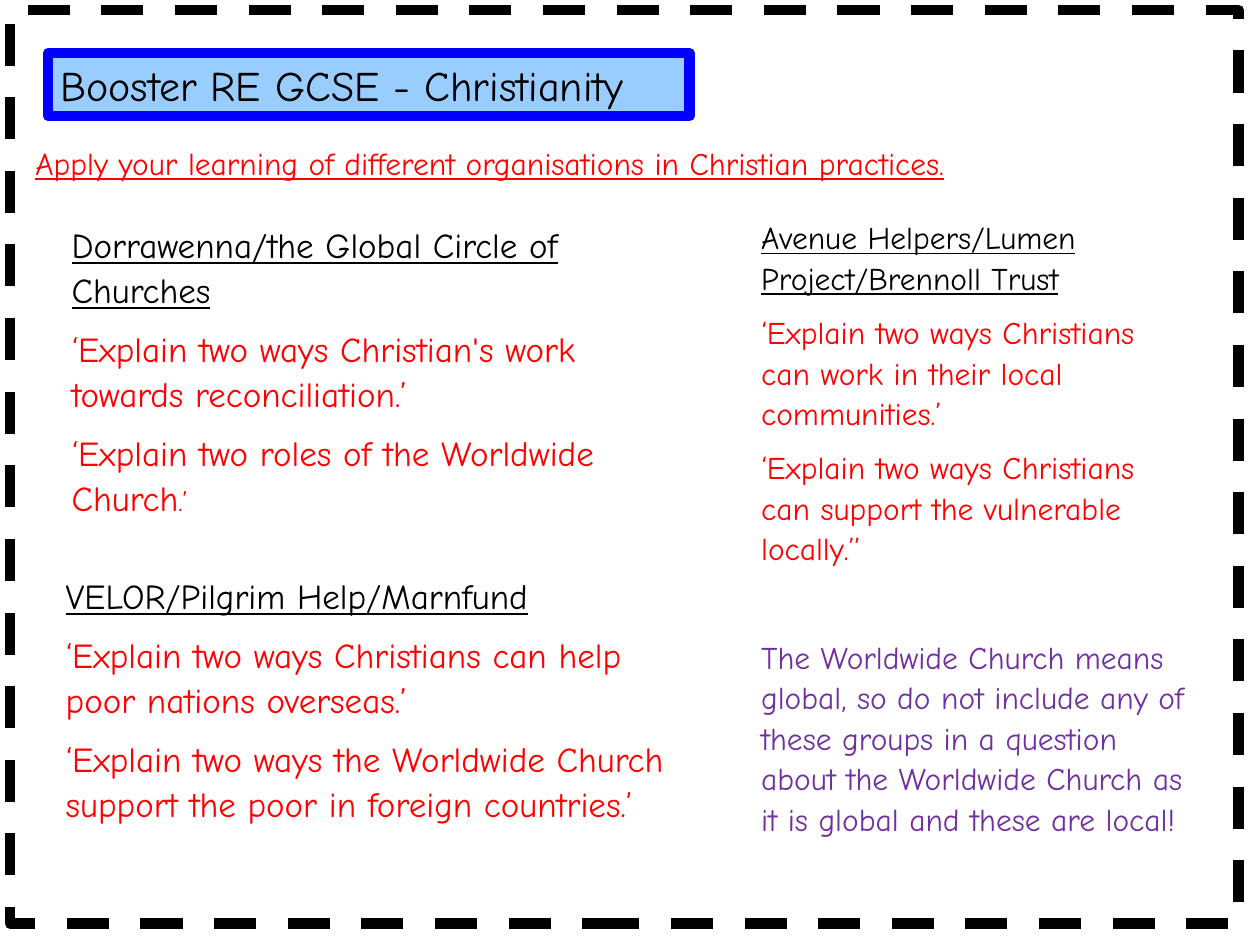
import pptx
import pptx.dml.color
import pptx.enum.dml
import pptx.enum.shapes
import pptx.enum.text
import pptx.oxml
import pptx.oxml.ns
import pptx.util

FONT = "Comic Neue"
COLOURS = {"black": "000000", "red": "FF0000", "purple": "7030A0",
           "blue": "0000FF", "sky": "99CCFF"}
BORDER_WIDTH = 6

FRAME_AREA = (0.2, 0.2, 24.77, 18.42)
TITLE = "Booster RE GCSE - Christianity"
TITLE_AREA = (0.97, 1.07, 12.93, 1.27)

# Each paragraph is (text, format); areas are left, top, width, height in cm.
HEADING = {"colour": "black", "underline": True}
QUESTION = {"colour": "red"}
BLOCKS = [
    {"area": (0.46, 2.72, 23.04, 1.04), "size": 18, "paragraphs": [
        ("Apply your learning of different organisations in Christian practices.",
         {"colour": "red", "underline": True}),
    ]},
    {"area": (1.19, 4.32, 12.7, 7.29), "size": 20, "paragraphs": [
        ("Dorrawenna/the Global Circle of Churches", HEADING),
        ("‘Explain two ways Christian's work towards reconciliation.’", QUESTION),
        ("‘Explain two roles of the Worldwide Church",
         {**QUESTION, "ending": ".’", "ending_size": 16}),
    ]},
    {"area": (1.07, 11.4, 12.7, 7.29), "size": 20, "paragraphs": [
        ("VELOR/Pilgrim Help/Marnfund", HEADING),
        ("‘Explain two ways Christians can help poor nations overseas.’", QUESTION),
        ("‘Explain two ways the Worldwide Church support the poor in foreign countries.’",
         QUESTION),
    ]},
    {"area": (15.09, 4.22, 9.14, 13.69), "size": 18, "paragraphs": [
        ("Avenue Helpers/Lumen Project/Brennoll Trust", HEADING),
        ("‘Explain two ways Christians can work in their local communities.’", QUESTION),
        ("‘Explain two ways Christians can support the vulnerable locally.’’", QUESTION),
        ("The Worldwide Church means global, so do not include any of these groups "
         "in a question about the Worldwide Church as it is global and these are local!",
         {"colour": "purple", "before": 31}),
    ]},
]


def rgb(name):
    return pptx.dml.color.RGBColor.from_string(COLOURS[name])


def place(shape, area):
    shape.left, shape.top, shape.width, shape.height = map(pptx.util.Cm, area)


def prepare_text(shape):
    frame = shape.text_frame
    frame.word_wrap = True
    frame.auto_size = pptx.enum.text.MSO_AUTO_SIZE.NONE
    frame.vertical_anchor = pptx.enum.text.MSO_ANCHOR.TOP
    return frame


def add_span(para, text, size, colour, underline):
    span = para.add_run()
    span.text = text
    span.font.name = FONT
    span.font.size = pptx.util.Pt(size)
    span.font.bold = False
    span.font.underline = underline
    span.font.color.rgb = rgb(colour)


def write(para, text, size=18, colour="black", underline=False, before=0, after=8,
          spacing=1.07, ending="", ending_size=None):
    """Fill an unbulleted paragraph; ending is a closing span in its own size."""
    properties = para._p.get_or_add_pPr()
    properties.set("marL", "0")
    properties.set("indent", "0")
    properties.append(pptx.oxml.parse_xml(
        f"<a:buNone {pptx.oxml.ns.nsdecls('a')}/>"))
    para.alignment = pptx.enum.text.PP_ALIGN.LEFT
    para.line_spacing = spacing
    para.space_before = pptx.util.Pt(before)
    para.space_after = pptx.util.Pt(after)
    add_span(para, text, size, colour, underline)
    if ending:
        add_span(para, ending, ending_size, colour, underline)


def set_border(shape, colour):
    shape.line.color.rgb = rgb(colour)
    shape.line.width = pptx.util.Pt(BORDER_WIDTH)


def add_frame(page):
    frame = page.shapes.add_shape(pptx.enum.shapes.MSO_SHAPE.RECTANGLE,
                                  *map(pptx.util.Cm, FRAME_AREA))
    frame.shadow.inherit = False
    frame.fill.background()
    set_border(frame, "black")
    frame.line.dash_style = pptx.enum.dml.MSO_LINE.DASH


def fill_title(box):
    place(box, TITLE_AREA)
    box.fill.solid()
    box.fill.fore_color.rgb = rgb("sky")
    set_border(box, "blue")
    write(prepare_text(box).paragraphs[0], TITLE, size=24, after=0, spacing=1.0)


def fill_block(box, block):
    place(box, block["area"])
    frame = prepare_text(box)
    for number, (text, style) in enumerate(block["paragraphs"]):
        para = frame.add_paragraph() if number else frame.paragraphs[0]
        write(para, text, size=block["size"], **style)


def main():
    deck = pptx.Presentation()
    deck.slide_width, deck.slide_height = pptx.util.Cm(25.4), pptx.util.Cm(19.05)
    comparison_layout = deck.slide_layouts[4]
    page = deck.slides.add_slide(comparison_layout)
    title, *bodies = page.placeholders
    add_frame(page)
    fill_title(title)
    for box, block in zip(bodies, BLOCKS):
        fill_block(box, block)
    deck.save("out.pptx")


if __name__ == "__main__":
    main()
